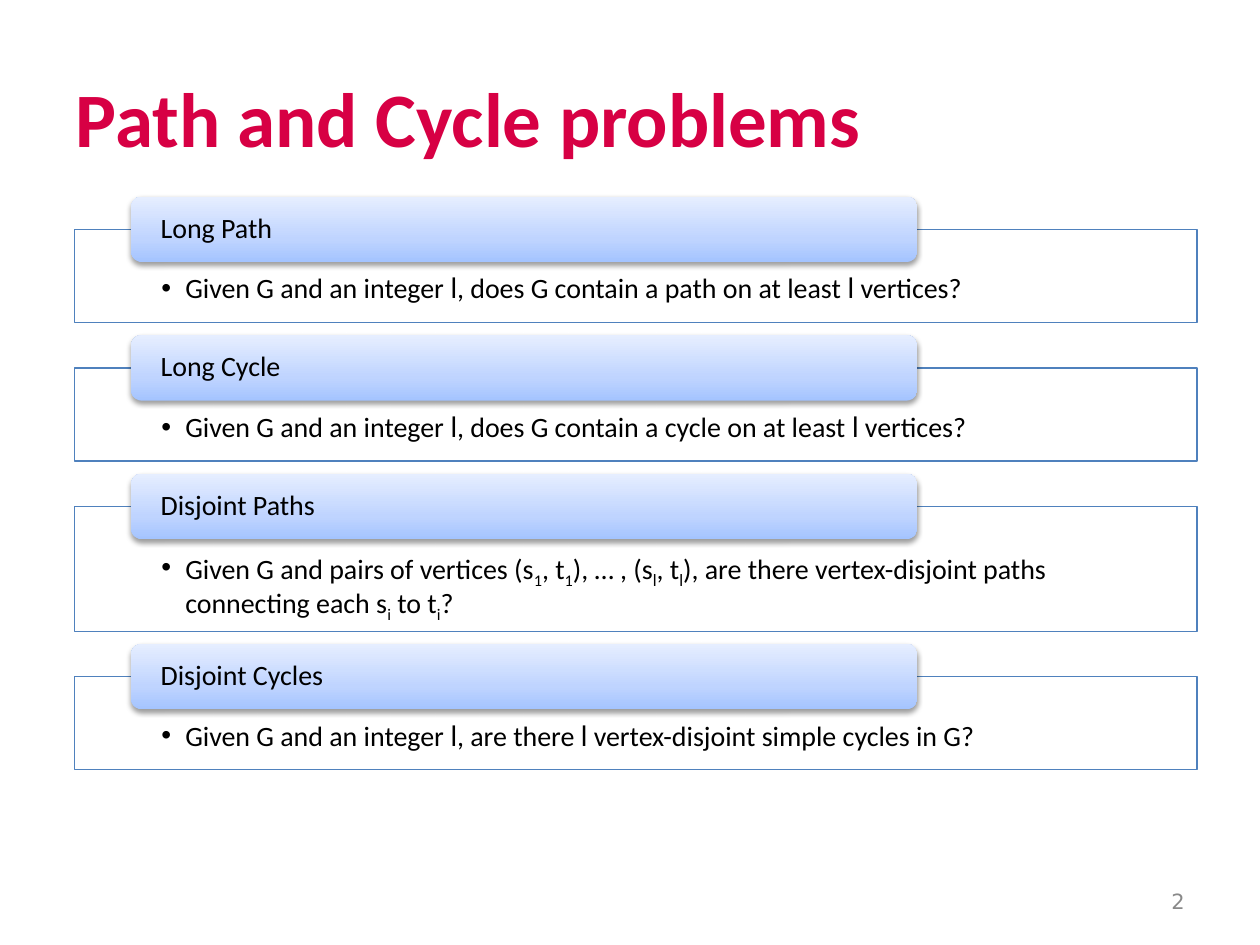
from copy import deepcopy

from lxml.etree import SubElement as Sub
from pptx import Presentation
from pptx.dml.color import RGBColor as RGB
from pptx.enum.shapes import MSO_SHAPE as Kind
from pptx.enum.text import MSO_ANCHOR as Anchor, PP_ALIGN as Align
from pptx.oxml.ns import qn
from pptx.util import Inches, Pt

RED = RGB(0xD7, 0x00, 0x44)
BLUE = RGB(0x4F, 0x81, 0xBD)
GREY = RGB(0x89, 0x89, 0x89)
BLACK = RGB(0, 0, 0)
WHITE = RGB(0xFF, 0xFF, 0xFF)
SHADES = [
    (0, RGB(0xA4, 0xC4, 0xFF)),
    (0.35, RGB(0xBF, 0xD4, 0xFF)),
    (1, RGB(0xE6, 0xEE, 0xFF)),
]

# Special runs are (text, font, subscript); plain strings use the body font.
ELL = ("l", "Lato", False)
SUB_L = ("l", "Lato", True)
SUB_1 = ("1", "Calibri", True)
SUB_I = ("i", "Calibri", True)

START = "Given G and an integer "
TASKS = [
    ("Long Path", 0.74,
     [START, ELL, ", does G contain a path on at least ", ELL, " vertices?"]),
    ("Long Cycle", 0.74,
     [START, ELL, ", does G contain a cycle on at least ", ELL, " vertices?"]),
    ("Disjoint Paths", 0.99,
     ["Given G and pairs of vertices (s", SUB_1, ", t", SUB_1, "), … , (s",
      SUB_L, ", t", SUB_L,
      "), are there vertex-disjoint paths connecting each s", SUB_I,
      " to t", SUB_I, "?"]),
    ("Disjoint Cycles", 0.74,
     [START, ELL, ", are there ", ELL,
      " vertex-disjoint simple cycles in G?"]),
]
TOP, TAB, GAP = 1.56, 0.52, 0.1


def assign(item, **values):
    for name, value in values.items():
        setattr(item, name, value)


class Deck:
    def __init__(self):
        self.prs = Presentation()
        assign(self.prs, slide_width=Inches(10), slide_height=Inches(7.5))
        self.slide = self.prs.slides.add_slide(self.prs.slide_layouts[5])

    def add_runs(self, para, parts, size=16, color=BLACK, font="Calibri",
                 bold=False):
        for part in parts:
            text, face, sub = (part, font, False) if isinstance(part, str) else part
            run = para.add_run()
            run.text = text
            assign(run.font, name=face, size=Pt(size), bold=bold)
            run.font.color.rgb = color
            if sub:
                run.font._element.set("baseline", "-25000")

    def frame(self, shape, left, top, anchor, bottom=0):
        """Set the insets and anchor; return the first paragraph."""
        frame = shape.text_frame
        assign(frame, word_wrap=True, vertical_anchor=anchor,
               margin_left=Inches(left), margin_right=Inches(left),
               margin_top=Inches(top), margin_bottom=Inches(bottom))
        para = frame.paragraphs[0]
        assign(para, alignment=Align.LEFT, line_spacing=0.9)
        return para

    def shape(self, kind, *place):
        shape = self.slide.shapes.add_shape(kind, *map(Inches, place))
        shape.shadow.inherit = False
        return shape

    def title(self, text):
        title = self.slide.shapes.title
        assign(title, left=Inches(0.5), top=Inches(0.3),
               width=Inches(9), height=Inches(1.25))
        para = title.text_frame.paragraphs[0]
        para.alignment = Align.LEFT
        self.add_runs(para, [text], 44, RED, bold=True)

    def box(self, top, height, parts):
        box = self.shape(Kind.RECTANGLE, 0.59, top, 8.91, height)
        box.fill.solid()
        box.fill.fore_color.rgb = WHITE
        box.line.color.rgb = BLUE
        box.line.width = Pt(0.75)
        para = self.frame(box, 0.69, 0.36, Anchor.TOP, 0.12)
        props = para._p.get_or_add_pPr()
        props.set("marL", str(Inches(0.19)))
        props.set("indent", str(Inches(-0.19)))
        Sub(props, qn("a:buFont"), typeface="Arial")
        Sub(props, qn("a:buChar"), char="•")
        self.add_runs(para, parts)

    def tab(self, top, text):
        tab = self.shape(Kind.ROUNDED_RECTANGLE, 1.04, top, 6.24, TAB)
        tab.line.fill.background()
        self.shade(tab)
        self.drop(tab)
        self.add_runs(self.frame(tab, 0.21, 0, Anchor.MIDDLE), [text])

    def shade(self, shape):
        shape.fill.gradient()
        shape.fill.gradient_angle = 90
        stops = shape._element.spPr.find(".//" + qn("a:gsLst"))
        stops.append(deepcopy(stops[0]))
        for stop, (spot, color) in zip(shape.fill.gradient_stops, SHADES):
            stop.position = spot
            stop.color.rgb = color

    def drop(self, shape):
        """Add a soft shadow below the shape."""
        effects = shape._element.spPr.find(qn("a:effectLst"))
        shadow = Sub(effects, qn("a:outerShdw"), blurRad=str(Pt(3.1)),
                     dist=str(Pt(1.6)), dir="5400000", rotWithShape="0")
        color = Sub(shadow, qn("a:srgbClr"), val="000000")
        Sub(color, qn("a:alpha"), val="38000")

    def number(self, text):
        box = self.slide.shapes.add_textbox(
            *map(Inches, (7.17, 6.95, 2.33, 0.4)))
        para = self.frame(box, 0.1, 0.05, Anchor.MIDDLE, 0.05)
        assign(para, alignment=Align.RIGHT, line_spacing=1.0)
        self.add_runs(para, [text], 12, GREY, "DejaVu Sans")


def main():
    deck = Deck()
    deck.title("Path and Cycle problems")
    top = TOP
    for name, height, parts in TASKS:
        deck.box(top + TAB / 2, height, parts)
        deck.tab(top, name)
        top += TAB / 2 + height + GAP
    deck.number("2")
    deck.prs.save("out.pptx")


if __name__ == "__main__":
    main()
